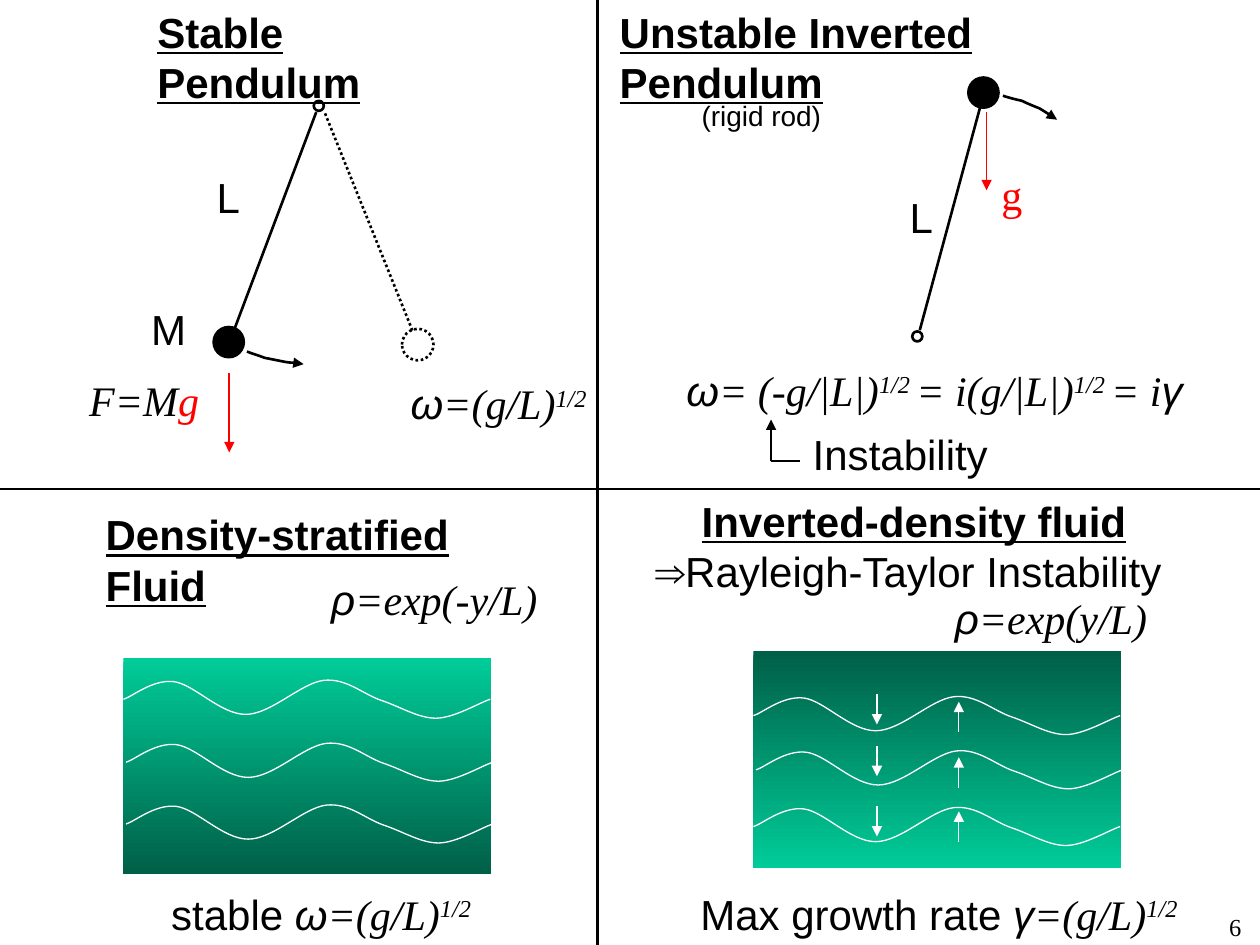
from lxml import etree
from pptx import Presentation
from pptx.dml.color import RGBColor
from pptx.enum.dml import MSO_LINE
from pptx.enum.shapes import MSO_CONNECTOR, MSO_SHAPE
from pptx.enum.text import PP_ALIGN
from pptx.oxml.ns import qn
from pptx.util import Inches, Pt

STRAIGHT = MSO_CONNECTOR.STRAIGHT
OVAL = MSO_SHAPE.OVAL
RECTANGLE = MSO_SHAPE.RECTANGLE
DOTTED = MSO_LINE.ROUND_DOT
LEFT, CENTER, RIGHT = PP_ALIGN.LEFT, PP_ALIGN.CENTER, PP_ALIGN.RIGHT

COLORS = {"ink": "000000", "gravity": "FF0000", "wave": "FFFFFF",
          "light": "00CC99", "dense": "005F47"}
SANS, SERIF = "Arial", "Times New Roman"
STYLES = {
    "plain": {"font": SANS},
    "head": {"font": SANS, "bold": True, "underline": True},
    "greek": {"font": SANS, "italic": True},
    "math": {"font": SERIF, "italic": True},
    "power": {"font": SERIF, "italic": True, "raised": True},
    "force": {"font": SERIF, "italic": True, "color": "gravity"},
    "gravity": {"font": SERIF, "color": "gravity"},
    "note": {"font": SANS, "size": 16},
    "page": {"font": SERIF, "size": 14},
}
FREQUENCY = [("ω", "greek"), ("=(g/L)", "math"), ("1/2", "power")]
WAVE = [(0, 0.17), (0.07, 0.15), (0.23, 0.01), (0.4, 0.03), (0.56, 0.05), (0.77, 0.29),
        (0.97, 0.29), (1.17, 0.29), (1.41, 0.04), (1.59, 0.02), (1.77, 0), (1.9, 0.13),
        (2.05, 0.18), (2.2, 0.23), (2.34, 0.32), (2.48, 0.32), (2.62, 0.32), (2.82, 0.2),
        (2.91, 0.17)]
STABLE_SWING = [(0, 0), (0.02, 0.01), (0.09, 0.03), (0.14, 0.05), (0.19, 0.06),
                (0.24, 0.07), (0.29, 0.08), (0.34, 0.09), (0.42, 0.09), (0.45, 0.1)]
UNSTABLE_SWING = [(0, 0), (0.03, 0.01), (0.1, 0.03), (0.15, 0.04), (0.19, 0.06),
                  (0.24, 0.08), (0.29, 0.1), (0.34, 0.13), (0.4, 0.17), (0.43, 0.19)]


def rgb(name):
    return RGBColor.from_string(COLORS[name])


def style_line(line, color, weight, arrow=False, dash=None):
    line.color.rgb = rgb(color)
    line.width = Pt(weight)
    if dash:
        line.dash_style = dash
    if arrow:
        etree.SubElement(line._get_or_add_ln(), qn("a:tailEnd"), type="triangle")


def add_line(slide, x1, y1, x2, y2, color="ink", weight=1.5, arrow=False, dash=None):
    connector = slide.shapes.add_connector(
        STRAIGHT, Inches(x1), Inches(y1), Inches(x2), Inches(y2))
    style_line(connector.line, color, weight, arrow, dash)
    etree.SubElement(connector._element.spPr, qn("a:effectLst"))


def add_circle(slide, x, y, size, filled=False, dash=None):
    circle = slide.shapes.add_shape(OVAL, Inches(x), Inches(y), Inches(size), Inches(size))
    circle.shadow.inherit = False
    if filled:
        circle.fill.solid()
        circle.fill.fore_color.rgb = rgb("ink")
    else:
        circle.fill.background()
    style_line(circle.line, "ink", 0.75 if filled else 1.5, dash=dash)


def add_curve(slide, x, y, controls, color, weight, arrow=False):
    points = [(Inches(x + dx), Inches(y + dy)) for dx, dy in controls]
    builder = slide.shapes.build_freeform(*points[0])
    builder.add_line_segments(points[1:], close=False)
    curve = builder.convert_to_shape()
    outline = next(curve._element.iter(qn("a:lnTo"))).getparent()
    for index, segment in enumerate(outline.findall(qn("a:lnTo"))):
        if index % 3 == 0:
            bezier = etree.SubElement(outline, qn("a:cubicBezTo"))
        bezier.append(segment[0])
        outline.remove(segment)
    curve.shadow.inherit = False
    curve.fill.background()
    style_line(curve.line, color, weight, arrow)


def add_text(slide, x, y, width, height, *lines, wrap=False, align=LEFT):
    box = slide.shapes.add_textbox(Inches(x), Inches(y), Inches(width), Inches(height))
    frame = box.text_frame
    frame.word_wrap = wrap
    for index, parts in enumerate(lines):
        paragraph = frame.add_paragraph() if index else frame.paragraphs[0]
        paragraph.alignment = align
        for words, style_name in parts:
            style = STYLES[style_name]
            run = paragraph.add_run()
            run.text = words
            run.font.name = style["font"]
            run.font.size = Pt(style.get("size", 24))
            run.font.bold = style.get("bold", False)
            run.font.italic = style.get("italic", False)
            run.font.underline = style.get("underline", False)
            run.font.color.rgb = rgb(style.get("color", "ink"))
            if style.get("raised"):
                run._r.get_or_add_rPr().set("baseline", "30000")
    return frame


def add_fluid(slide, x, y, top_color, bottom_color, waves):
    tank = slide.shapes.add_shape(RECTANGLE, Inches(x), Inches(y), Inches(2.92), Inches(1.72))
    tank.shadow.inherit = False
    tank.line.fill.background()
    tank.fill.gradient()
    tank.fill.gradient_angle = 270
    for stop, color in zip(tank.fill.gradient_stops, (top_color, bottom_color)):
        stop.color.rgb = rgb(color)
    for dx, dy in waves:
        add_curve(slide, x + dx, y + dy, WAVE, "wave", 0.75)


def stable_pendulum(slide, x, y):
    add_line(slide, x + 2.51, y + 0.89, x + 1.85, y + 2.64)
    add_circle(slide, x + 1.69, y + 2.59, 0.25, filled=True)
    add_circle(slide, x + 2.49, y + 0.8, 0.08)
    add_line(slide, x + 2.58, y + 0.9, x + 3.28, y + 2.64, dash=DOTTED)
    add_circle(slide, x + 3.19, y + 2.61, 0.25, dash=DOTTED)
    add_curve(slide, x + 1.96, y + 2.79, STABLE_SWING, "ink", 1.5, arrow=True)
    add_line(slide, x + 1.82, y + 2.96, x + 1.82, y + 3.59, "gravity", 1, arrow=True)
    add_text(slide, x + 1.15, y, 2.88, 0.5, [("Stable Pendulum", "head")], wrap=True)
    add_text(slide, x + 1.62, y + 1.31, 0.39, 0.5, [("L", "plain")])
    add_text(slide, x + 1.1, y + 2.36, 0.48, 0.5, [("M", "plain")])
    add_text(slide, x + 0.61, y + 2.92, 1.19, 0.51, [("F=M", "math"), ("g", "force")])
    add_text(slide, x + 3.16, y + 2.95, 1.71, 0.51, FREQUENCY)


def unstable_pendulum(slide, x, y):
    add_text(slide, x + 0.08, y, 4.68, 0.5, [("Unstable Inverted Pendulum", "head")], wrap=True)
    add_text(slide, x + 0.73, y + 0.73, 1.15, 0.37, [("(rigid rod)", "note")])
    add_text(slide, x + 0.61, y + 2.84, 4.3, 0.51,
             [("ω", "greek"), ("= (-g/|L|)", "math"), ("1/2 ", "power"),
              ("= i(g/|L|)", "math"), ("1/2 ", "power"), ("= i", "math"), ("γ", "greek")])
    add_line(slide, x + 3.09, y + 0.89, x + 3.09, y + 1.51, "gravity", 1, arrow=True)
    add_line(slide, x + 2.56, y + 2.62, x + 3.05, y + 0.81)
    add_circle(slide, x + 2.94, y + 0.61, 0.25, filled=True)
    add_circle(slide, x + 2.5, y + 2.63, 0.08)
    add_curve(slide, x + 3.22, y + 0.76, UNSTABLE_SWING, "ink", 1.5, arrow=True)
    add_text(slide, x + 3.11, y + 1.29, 0.37, 0.5, [("g", "gravity")])
    add_text(slide, x + 2.38, y + 1.47, 0.39, 0.5, [("L", "plain")])
    add_text(slide, x + 1.61, y + 3.35, 1.59, 0.5, [("Instability", "plain")], align=CENTER)
    add_line(slide, x + 1.38, y + 3.66, x + 1.38, y + 3.33, arrow=True)
    add_line(slide, x + 1.38, y + 3.66, x + 1.61, y + 3.66)


def stratified_fluid(slide, x, y):
    add_text(slide, x + 0.74, y + 0.11, 3.79, 0.5,
             [("Density-stratified Fluid", "head")], wrap=True)
    add_text(slide, x + 2.53, y + 0.62, 1.97, 0.51, [("ρ", "greek"), ("=exp(-y/L)", "math")])
    add_fluid(slide, x + 0.98, y + 1.34, "light", "dense",
              [(0, 0.16), (0.02, 0.66), (0.02, 1.15)])
    add_text(slide, x + 1.26, y + 3.12, 2.61, 0.51, [("stable ", "plain"), *FREQUENCY])


def inverted_fluid(slide, x, y):
    heading = add_text(slide, x + 0.36, y, 4.35, 0.91, [("Inverted-density fluid", "head")],
                       [("⇒Rayleigh-Taylor Instability", "plain")], wrap=True)
    heading.paragraphs[0]._p.get_or_add_pPr().set("marL", str(Inches(0.37)))
    add_text(slide, x + 2.74, y + 0.77, 1.86, 0.51, [("ρ", "greek"), ("=exp(y/L)", "math")])
    add_fluid(slide, x + 1.24, y + 1.29, "dense", "light", [(0, 0.34), (0.02, 0.77), (0, 1.22)])
    for sinking, rising in ((1.63, 1.69), (2.04, 2.13), (2.52, 2.56)):
        add_line(slide, x + 2.22, y + sinking, x + 2.22, y + sinking + 0.24,
                 "wave", 0.75, arrow=True)
        add_line(slide, x + 2.87, y + rising + 0.24, x + 2.87, y + rising,
                 "wave", 0.75, arrow=True)
    add_text(slide, x + 0.72, y + 3.12, 4.03, 0.51,
             [("Max growth rate ", "plain"), ("γ", "greek"), *FREQUENCY[1:]])


def main():
    deck = Presentation()
    deck.slide_width, deck.slide_height = Inches(10), Inches(7.5)
    slide = deck.slides.add_slide(deck.slide_layouts[6])
    middle_x, middle_y = 4.74, 3.88
    stable_pendulum(slide, 0, 0)
    unstable_pendulum(slide, middle_x, 0)
    stratified_fluid(slide, 0, middle_y)
    inverted_fluid(slide, middle_x, middle_y)
    add_line(slide, 0, middle_y, 10, middle_y)
    add_line(slide, middle_x, 0, middle_x, 7.5)
    add_text(slide, 7.87, 7.19, 2.08, 0.31, [("6", "page")], wrap=True, align=RIGHT)
    deck.save("out.pptx")


if __name__ == "__main__":
    main()
